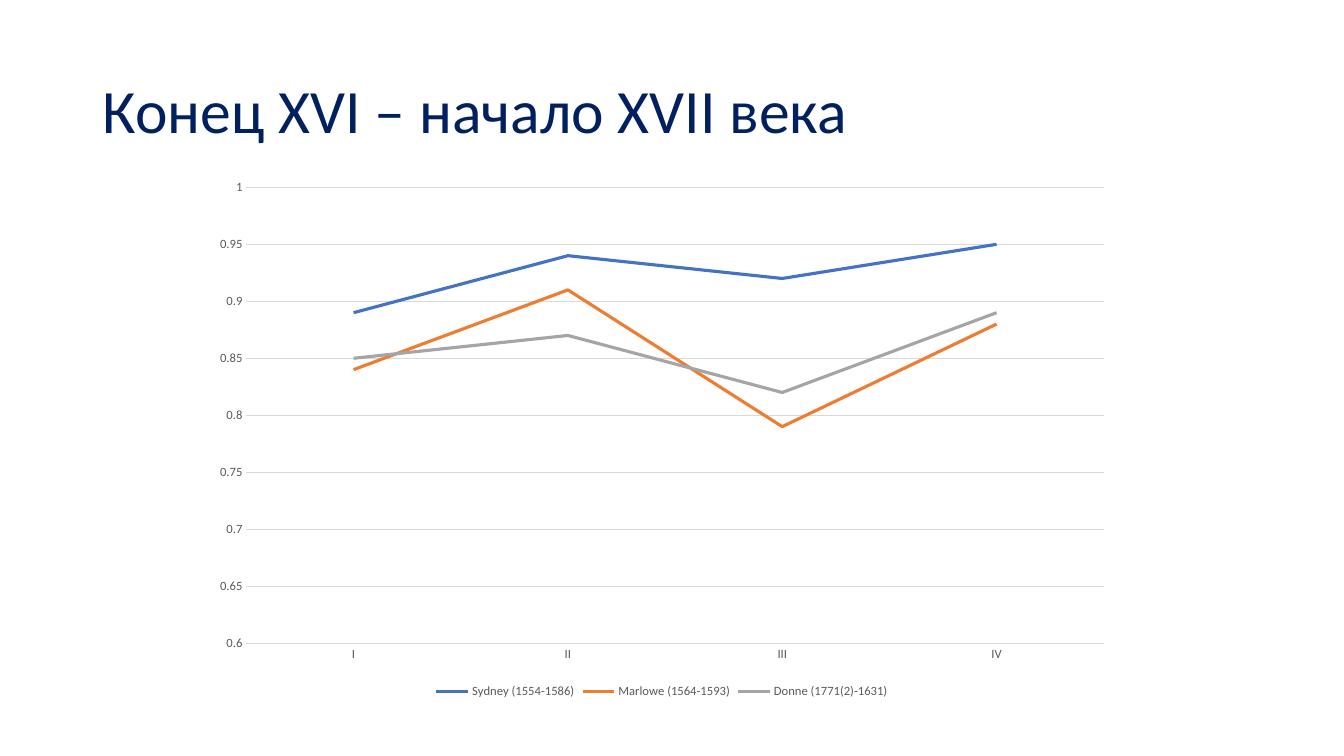
from dataclasses import dataclass

import pptx
import pptx.chart.axis
import pptx.chart.chart
import pptx.chart.data
import pptx.dml.color
import pptx.dml.line
import pptx.enum.chart
import pptx.enum.text
import pptx.slide
import pptx.text.text
import pptx.util
from pptx.util import Inches


@dataclass(frozen=True)
class Theme:
    font: str = "Calibri"
    title_color: str = "002060"
    label_color: str = "595959"
    grid_color: str = "D9D9D9"
    title_size: float = 44
    label_size: float = 9
    grid_width: float = 0.75
    series_width: float = 2.25


@dataclass(frozen=True)
class Poet:
    name: str
    values: tuple[float, ...]
    color: str


THEME = Theme()
CATEGORIES = ("I", "II", "III", "IV")
POETS = (
    Poet("Sydney (1554-1586)", (0.89, 0.94, 0.92, 0.95), "4472C4"),
    Poet("Marlowe (1564-1593)", (0.84, 0.91, 0.79, 0.88), "ED7D31"),
    Poet("Donne (1771(2)-1631)", (0.85, 0.87, 0.82, 0.89), "A5A5A5"),
)


def style_font(font: pptx.text.text.Font, size: float, color: str) -> None:
    font.name = THEME.font
    font.size = pptx.util.Pt(size)
    font.color.rgb = pptx.dml.color.RGBColor.from_string(color)


def style_line(line: pptx.dml.line.LineFormat, width: float, color: str) -> None:
    line.width = pptx.util.Pt(width)
    line.color.rgb = pptx.dml.color.RGBColor.from_string(color)


def add_title(slide: pptx.slide.Slide, text: str) -> None:
    sp = slide.shapes.add_textbox(Inches(0.92), Inches(0.4), Inches(11.5), Inches(1.45))
    tf = sp.text_frame
    tf.word_wrap = True
    tf.vertical_anchor = pptx.enum.text.MSO_ANCHOR.MIDDLE
    tf.text = text
    p = tf.paragraphs[0]
    p.line_spacing = 0.9
    style_font(p.runs[0].font, THEME.title_size, THEME.title_color)


def style_axes(chart: pptx.chart.chart.Chart) -> None:
    for axis in (chart.category_axis, chart.value_axis):
        axis.major_tick_mark = pptx.enum.chart.XL_TICK_MARK.NONE
        axis.minor_tick_mark = pptx.enum.chart.XL_TICK_MARK.NONE
        style_font(axis.tick_labels.font, THEME.label_size, THEME.label_color)
    style_line(chart.category_axis.format.line, THEME.grid_width, THEME.grid_color)

    axis = chart.value_axis
    axis.minimum_scale, axis.maximum_scale, axis.major_unit = 0.6, 1, 0.05
    axis.format.line.fill.background()
    axis.has_major_gridlines = True
    style_line(axis.major_gridlines.format.line, THEME.grid_width, THEME.grid_color)


def add_line_chart(slide: pptx.slide.Slide, poets: tuple[Poet, ...]) -> None:
    data = pptx.chart.data.CategoryChartData()
    data.categories = CATEGORIES
    for poet in poets:
        data.add_series(poet.name, poet.values)
    chart = slide.shapes.add_chart(
        pptx.enum.chart.XL_CHART_TYPE.LINE,
        Inches(2), Inches(1.68), Inches(9.13), Inches(5.29), data,
    ).chart
    chart.has_title = False
    style_font(chart.font, THEME.label_size, THEME.label_color)
    style_axes(chart)

    # Series lines
    plot = chart.plots[0]
    plot.vary_by_categories = False
    for series, poet in zip(plot.series, poets):
        series.smooth = False
        series.marker.style = pptx.enum.chart.XL_MARKER_STYLE.NONE
        style_line(series.format.line, THEME.series_width, poet.color)

    # Legend
    chart.has_legend = True
    chart.legend.position = pptx.enum.chart.XL_LEGEND_POSITION.BOTTOM
    chart.legend.include_in_layout = False
    style_font(chart.legend.font, THEME.label_size, THEME.label_color)


def main() -> None:
    prs = pptx.Presentation()
    prs.slide_width, prs.slide_height = Inches(13.33), Inches(7.5)
    slide = prs.slides.add_slide(prs.slide_layouts[6])
    add_title(slide, "Конец XVI – начало XVII века")
    add_line_chart(slide, POETS)
    prs.save("out.pptx")


if __name__ == "__main__":
    main()
